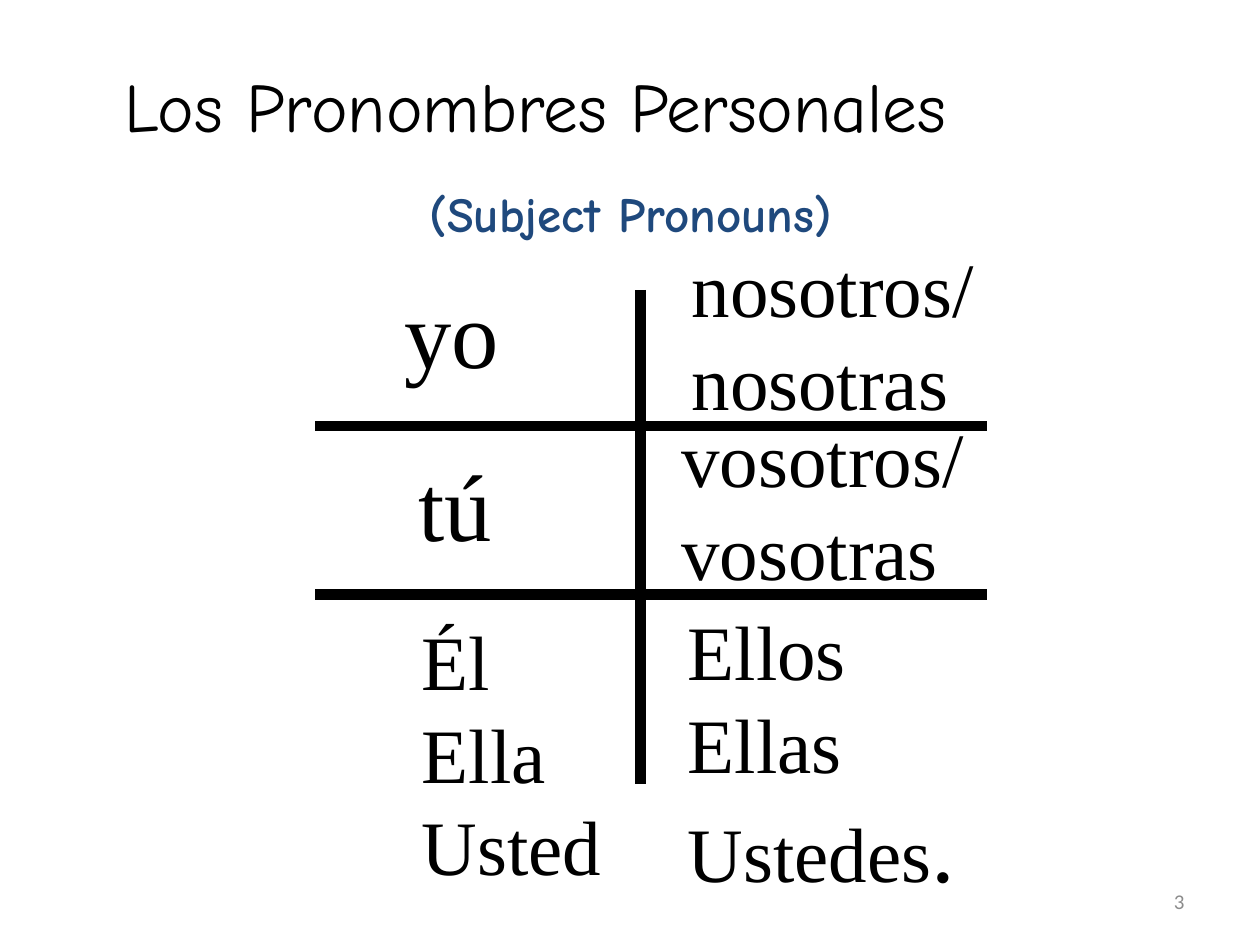
"""Build a slide that charts the Spanish subject pronouns."""
from dataclasses import dataclass
from typing import NamedTuple

from lxml.etree import SubElement
from pptx import Presentation
from pptx.dml.color import RGBColor
from pptx.enum.shapes import MSO_CONNECTOR as Connector
from pptx.enum.text import MSO_ANCHOR as Anchor, MSO_AUTO_SIZE as AutoSize, PP_ALIGN as Align
from pptx.oxml.ns import qn
from pptx.util import Pt


@dataclass(frozen=True)
class Theme:
    ink: str = "000000"
    accent: str = "1F497D"
    muted: str = "8C8C8C"
    heading_font: str = "Comic Neue"
    pronoun_font: str = "Times New Roman"
    number_font: str = "Calibri"
    title: float = 39.6
    subtitle: float = 28
    singular: float = 54
    pronoun: float = 44
    number: float = 12
    rule: float = 6
    leading: float = 1.2
    inset: float = 3.6


class Box(NamedTuple):
    left: float
    top: float
    width: float
    height: float


class Run(NamedTuple):
    text: str
    size: float


class PronounCell(NamedTuple):
    box: Box
    lines: list[list[Run]]


class Rule(NamedTuple):
    x1: float
    y1: float
    x2: float
    y2: float


THEME = Theme()


def pronoun_lines(*words: str, size: float = THEME.pronoun) -> list[list[Run]]:
    return [[Run(word, size)] for word in words]


CELLS = [
    PronounCell(Box(224, 150.5, 126, 72.7), pronoun_lines("yo", size=THEME.singular)),
    PronounCell(Box(231.8, 249.1, 126, 72.7), pronoun_lines("tú", size=THEME.singular)),
    PronounCell(Box(234, 344.9, 252, 167), pronoun_lines("Él", "Ella", "Usted")),
    PronounCell(Box(388.1, 131.8, 210.2, 113.8), pronoun_lines("nosotros/", "nosotras")),
    PronounCell(Box(382.3, 229, 221.8, 113.8), pronoun_lines("vosotros/", "vosotras")),
    PronounCell(
        Box(385.9, 339.1, 354.2, 179.3),
        pronoun_lines("Ellos", "Ellas")
        + [[Run("Ustedes", THEME.pronoun), Run(".", THEME.singular)]],
    ),
]
RULES = [Rule(366, 165.6, 366, 447.8)] + [Rule(180, y, 564, y) for y in (243.4, 339.8)]


def write_text(shape, lines: list[list[Run]], *, font: str, color: str = THEME.ink,
               bold: bool = False, align: Align = Align.LEFT, anchor: Anchor = Anchor.TOP,
               wrap: bool = True, leading: float | None = None,
               top_inset: float = THEME.inset) -> None:
    frame = shape.text_frame
    frame.auto_size = AutoSize.NONE
    frame.word_wrap = wrap
    frame.vertical_anchor = anchor
    frame.margin_top = Pt(top_inset)
    for index, line in enumerate(lines):
        paragraph = frame.add_paragraph() if index else frame.paragraphs[0]
        paragraph.alignment = align
        if leading:
            paragraph.line_spacing = Pt(leading * max(run.size for run in line))
        for text, size in line:
            run = paragraph.add_run()
            run.text = text
            run.font.name = font
            run.font.size = Pt(size)
            run.font.bold = bold
            run.font.color.rgb = RGBColor.from_string(color)


def add_text_box(slide, box: Box, lines: list[list[Run]], **text_format) -> None:
    shape = slide.shapes.add_textbox(*map(Pt, box))
    write_text(shape, lines, **text_format)


def place_title(slide, box: Box, text: str) -> None:
    title = slide.shapes.title
    title.left, title.top, title.width, title.height = map(Pt, box)
    write_text(title, [[Run(text, THEME.title)]], font=THEME.heading_font,
               align=Align.CENTER, anchor=Anchor.MIDDLE)


def draw_rules(slide, rules: list[Rule]) -> None:
    group = slide.shapes.add_group_shape()
    for rule in rules:
        connector = group.shapes.add_connector(Connector.STRAIGHT, *map(Pt, rule))
        connector.line.color.rgb = RGBColor.from_string(THEME.ink)
        connector.line.width = Pt(THEME.rule)
        SubElement(connector.element.spPr, qn("a:effectLst"))


def draw_cell(slide, cell: PronounCell) -> None:
    first_size = cell.lines[0][0].size
    add_text_box(slide, cell.box, cell.lines, font=THEME.pronoun_font, leading=THEME.leading,
                 top_inset=THEME.inset + 0.05 * first_size)


def main() -> None:
    presentation = Presentation()
    presentation.slide_width, presentation.slide_height = Pt(720), Pt(540)
    slide = presentation.slides.add_slide(presentation.slide_layouts.get_by_name("Title Only"))
    add_text_box(slide, Box(516.2, 500.4, 167.8, 28.8), [[Run("3", THEME.number)]],
                 font=THEME.number_font, color=THEME.muted, align=Align.RIGHT,
                 anchor=Anchor.MIDDLE)
    place_title(slide, Box(0, 36, 612, 48.2), "Los Pronombres Personales")
    add_text_box(slide, Box(226.8, 101.5, 267.1, 41),
                 [[Run("(Subject Pronouns)", THEME.subtitle)]], font=THEME.heading_font,
                 color=THEME.accent, bold=True, align=Align.CENTER, wrap=False)
    draw_rules(slide, RULES)
    for cell in CELLS:
        draw_cell(slide, cell)
    presentation.save("out.pptx")


if __name__ == "__main__":
    main()
